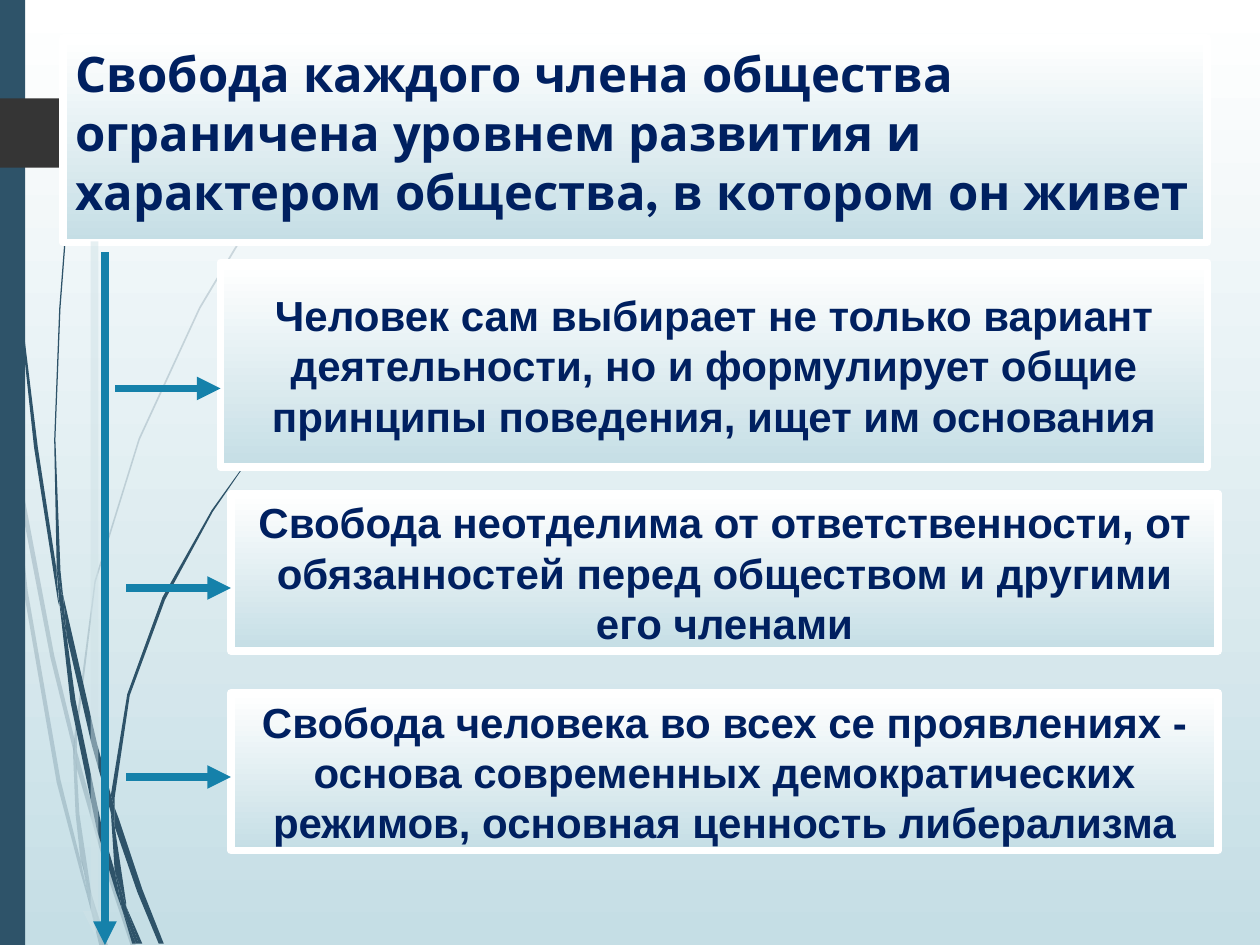
from dataclasses import dataclass

from lxml.etree import SubElement
from pptx import Presentation
from pptx.dml.color import RGBColor
from pptx.enum.shapes import MSO_CONNECTOR, MSO_SHAPE
from pptx.enum.text import MSO_ANCHOR, PP_ALIGN
from pptx.oxml.ns import qn
from pptx.util import Inches, Pt


@dataclass(frozen=True)
class Theme:
    """Colours, fonts and sizes of the slide."""
    white: str = "FFFFFF"
    mist: str = "C5DEE5"
    slate: str = "2E5369"
    coal: str = "353535"
    navy: str = "002060"
    teal: str = "1581AA"
    shade: str = "CFE2E7"
    head: str = "League Spartan"
    body: str = "Arial"
    head_size: int = 28
    body_size: int = 24
    stroke: float = 4.5


THEME = Theme()
COLS, ROWS = 120, 90
CELL = Inches(10) / COLS
POINT = Inches(1) / 100

PALE = [
    [(8, 350), (6, 322), (0, 282), (0, 299), (7, 344)],
    [(40, 522), (59, 599), (59, 586), (43, 520), (10, 345), (12, 376)],
    [(64, 607), (61, 596), (61, 610), (85, 694), (104, 751), (108, 751), (88, 692)],
    [(83, 751), (86, 751), (73, 711)],
    [(64, 683), (48, 619), (22, 469), (12, 376), (8, 350), (19, 470), (45, 621),
     (64, 693), (70, 714), (69, 707)],
    [(58, 599), (60, 646), (64, 683), (67, 692), (73, 711), (72, 706), (63, 646),
     (61, 610), (61, 608)],
    [(61, 584), (76, 462), (111, 349), (159, 245), (187, 198), (201, 175), (217, 154),
     (217, 153), (201, 175), (186, 197), (158, 244), (110, 348), (75, 461), (59, 584),
     (59, 586), (61, 596)],
    [(70, 714), (79, 751), (82, 751)],
    [(61, 608), (61, 610), (61, 596), (59, 586), (58, 599)],
    [(67, 692), (65, 683), (69, 707), (70, 714), (82, 751), (83, 751), (73, 711)],
]
DARK = [
    [(5, 110), (14, 233), (27, 355), (46, 477), (47, 481), (45, 457), (45, 453),
     (30, 355), (15, 232), (6, 109), (4, 48), (3, 0), (2, 0), (3, 48)],
    [(73, 592), (88, 645), (88, 633), (88, 631), (77, 590), (50, 472), (53, 505)],
    [(94, 649), (91, 641), (91, 656), (109, 708), (126, 749), (130, 749), (113, 706)],
    [(91, 691), (81, 657), (60, 556), (53, 505), (47, 477), (56, 557), (77, 659),
     (92, 708), (97, 722), (96, 717)],
    [(50, 472), (48, 453), (44, 349), (48, 245), (52, 193), (58, 141), (51, 193),
     (47, 245), (43, 349), (45, 449), (49, 472)],
    [(110, 749), (113, 749), (100, 719)],
    [(47, 477), (53, 505), (50, 472), (49, 472), (45, 449), (45, 453)],
    [(91, 633), (103, 552), (131, 476), (169, 406), (191, 374), (203, 359), (216, 344),
     (215, 344), (203, 358), (191, 373), (168, 405), (129, 474), (101, 551), (88, 631),
     (91, 641)],
    [(97, 722), (105, 749), (108, 749)],
    [(88, 645), (91, 691), (96, 706), (100, 719), (100, 716), (91, 656), (90, 651)],
    [(88, 645), (90, 651), (91, 656), (91, 641), (88, 631), (88, 633)],
    [(96, 706), (91, 691), (96, 717), (97, 722), (108, 749), (110, 749), (100, 719)],
]
TAB = [(149, 107), (124, 132), (121, 133), (0, 133), (0, 78), (121, 78), (124, 79),
       (149, 104)]

TITLE = ("Свобода каждого члена общества ограничена уровнем развития и характером "
         "общества, в котором он живет")
CARDS = [
    (21, 25, 19.5, "Человек сам выбирает не только вариант деятельности, но и "
                   "формулирует общие принципы поведения, ищет им основания"),
    (22, 47, 15, "Свобода неотделима от ответственности, от обязанностей перед "
                 "обществом и другими его членами"),
    (22, 66, 15, "Свобода человека во всех се проявлениях - основа современных "
                 "демократических режимов, основная ценность либерализма"),
]


def tint(name):
    """Turn a hex string into a colour."""
    return RGBColor.from_string(name)


def cells(*counts):
    """Turn counts of grid cells into lengths."""
    return [round(n * CELL) for n in counts]


def fade(fill):
    """Fill from white at the top to mist at the bottom."""
    fill.gradient()
    fill.gradient_angle = 270
    for stop, name, place in zip(fill.gradient_stops, (THEME.white, THEME.mist), (0, 1)):
        stop.color.rgb = tint(name)
        stop.position = place


def paint(shape, name, alpha=100):
    """Give a shape a flat fill with no line or shadow."""
    shape.shadow.inherit = False
    shape.line.fill.background()
    shape.fill.solid()
    shape.fill.fore_color.rgb = tint(name)
    if alpha < 100:
        hue = shape.fill._xPr.find(f".//{qn('a:srgbClr')}")
        SubElement(hue, qn("a:alpha"), val=str(alpha * 1000))


def add_blade(slide, points, name, alpha=100):
    """Draw a closed outline from points in hundredths of an inch."""
    pen = slide.shapes.build_freeform(*points[0], scale=POINT)
    pen.add_line_segments(points[1:], close=True)
    paint(pen.convert_to_shape(), name, alpha)


def add_card(slide, box, text, font, size, align, anchor):
    """Draw a faded box with a white border and bold text."""
    card = slide.shapes.add_shape(MSO_SHAPE.RECTANGLE, *cells(*box))
    card.shadow.inherit = False
    fade(card.fill)
    card.line.color.rgb = tint(THEME.white)
    card.line.width = Pt(THEME.stroke)
    frame = card.text_frame
    frame.word_wrap = True
    frame.vertical_anchor = anchor
    para = frame.paragraphs[0]
    para.alignment = align
    run = para.add_run()
    run.text = text
    run.font.name = font
    run.font.size = Pt(size)
    run.font.bold = True
    run.font.color.rgb = tint(THEME.navy)


def add_arrow(slide, start, end, shade=False):
    """Draw an arrow between two grid points, with a shadow if asked."""
    arrow = slide.shapes.add_connector(MSO_CONNECTOR.STRAIGHT, *cells(*start, *end))
    arrow.line.color.rgb = tint(THEME.teal)
    arrow.line.width = Pt(THEME.stroke)
    SubElement(arrow.line._get_or_add_ln(), qn("a:tailEnd"), type="triangle")
    effect = SubElement(arrow._element.spPr, qn("a:effectLst"))
    if shade:
        outer = SubElement(effect, qn("a:outerShdw"), dist=str(Pt(8.5)),
                           dir=str(225 * 60000), algn="ctr", rotWithShape="0")
        hue = SubElement(outer, qn("a:srgbClr"), val=THEME.shade)
        SubElement(hue, qn("a:alpha"), val="50000")


def add_decor(slide):
    """Draw the grass, the side bar and the tab."""
    for points in PALE:
        add_blade(slide, points, THEME.slate, 20)
    for points in DARK:
        add_blade(slide, points, THEME.slate)
    bar = slide.shapes.add_shape(MSO_SHAPE.RECTANGLE, *cells(0, 0, 2.4, ROWS))
    paint(bar, THEME.slate)
    add_blade(slide, TAB, THEME.coal)


def main():
    """Build the slide and save it."""
    deck = Presentation()
    deck.slide_width, deck.slide_height = cells(COLS, ROWS)
    slide = deck.slides.add_slide(deck.slide_layouts[6])
    fade(slide.background.fill)
    add_decor(slide)
    add_card(slide, (6, 3.6, 109, 19.5), TITLE, THEME.head, THEME.head_size,
             PP_ALIGN.LEFT, MSO_ANCHOR.TOP)
    for left, top, height, text in CARDS:
        add_card(slide, (left, top, 94, height), text, THEME.body, THEME.body_size,
                 PP_ALIGN.CENTER, MSO_ANCHOR.MIDDLE)
    add_arrow(slide, (10, 24), (10, ROWS), shade=True)
    for (left, *_), row in zip(CARDS, (37, 56, 74)):
        add_arrow(slide, (left - 10, row), (left, row))
    deck.save("out.pptx")


if __name__ == "__main__":
    main()
